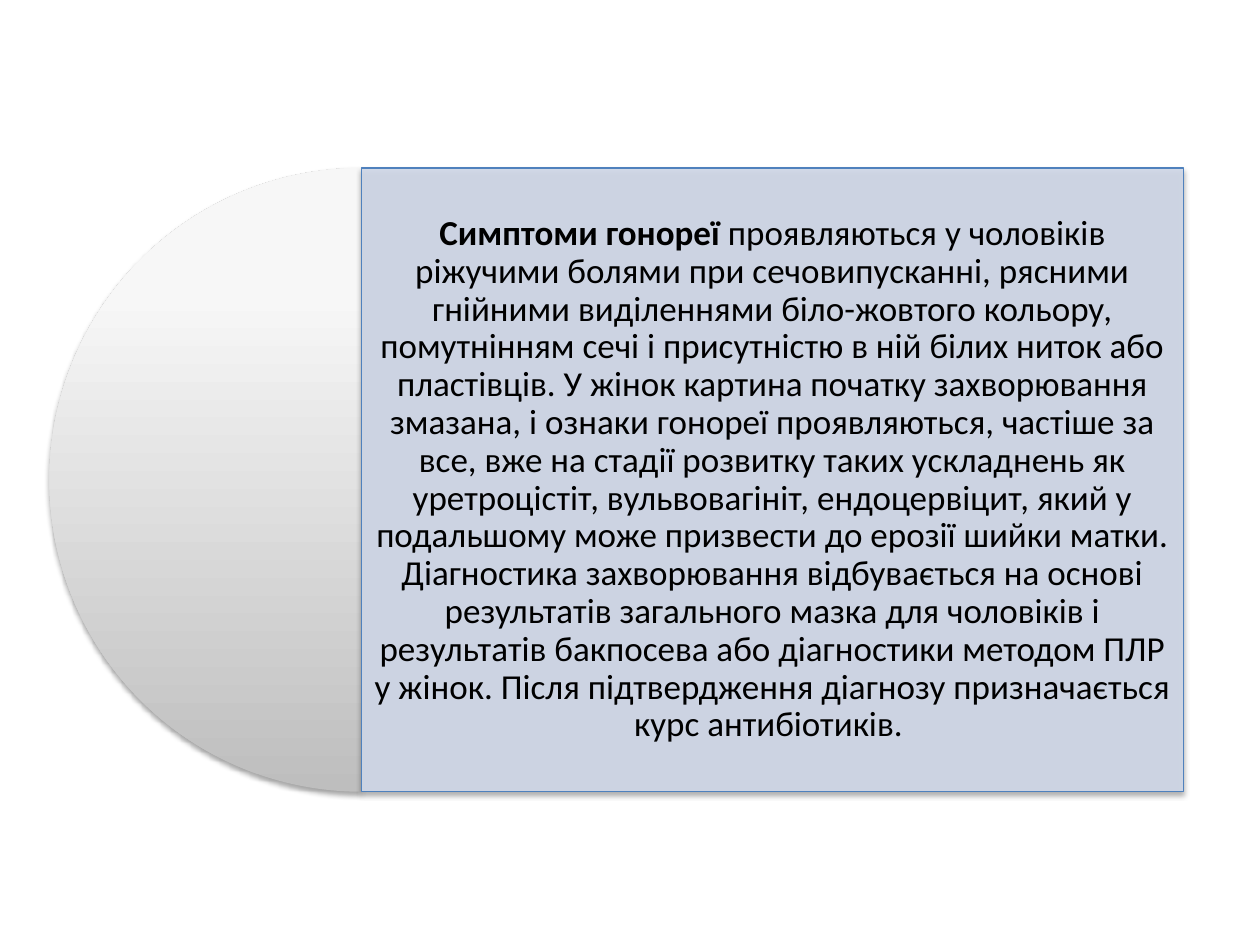
from lxml.etree import SubElement
from pptx import Presentation
from pptx.dml.color import RGBColor
from pptx.enum.shapes import MSO_SHAPE as Preset
from pptx.enum.text import MSO_ANCHOR as Anchor, PP_ALIGN as Align
from pptx.oxml.ns import qn
from pptx.util import Pt

SYMPTOMS = [
    ("Симптоми гонореї ", True),
    ("проявляються у чоловіків ріжучими болями при сечовипусканні, рясними "
     "гнійними виділеннями біло-жовтого кольору, помутнінням сечі і присутністю "
     "в ній білих ниток або пластівців. У жінок картина початку захворювання "
     "змазана, і ознаки гонореї проявляються, частіше за все, вже на стадії "
     "розвитку таких ускладнень як уретроцістіт, вульвовагініт, ендоцервіцит, "
     "який у подальшому може призвести до ерозії шийки матки. Діагностика "
     "захворювання відбувається на основі результатів загального мазка для "
     "чоловіків і результатів бакпосева або діагностики методом ПЛР у жінок. "
     "Після підтвердження діагнозу призначається курс антибіотиків. ", False),
]
GRADIENT = [(0, "BEBEBE"), (80, "F7F7F7"), (100, "F8F8F8")]
PIE_ANGLES = (90, 270)

LEFT, TOP, DIAMETER, PANEL_WIDTH = 28.2, 96, 356.4, 470
PIE_BOX = [Pt(v) for v in (LEFT, TOP, DIAMETER, DIAMETER)]
PANEL_BOX = [Pt(v) for v in (LEFT + DIAMETER / 2, TOP, PANEL_WIDTH, DIAMETER)]

FRAME_FORMAT = {"word_wrap": True, "vertical_anchor": Anchor.MIDDLE}
FRAME_FORMAT |= {f"margin_{side}": Pt(6) for side in ("left", "top", "right", "bottom")}
PARAGRAPH_FORMAT = {"alignment": Align.CENTER, "line_spacing": 0.9, "space_after": Pt(7)}
FONT_FORMAT = {"name": "Calibri", "size": Pt(20)}


def color(value):
    return RGBColor.from_string(value)


def apply(target, values):
    for name, value in values.items():
        setattr(target, name, value)


def add_color(parent, value, alpha=100):
    element = SubElement(parent, qn("a:srgbClr"), val=value)
    SubElement(element, qn("a:alpha"), val=str(alpha * 1000))


def add_shadowed(slide, preset, box):
    shape = slide.shapes.add_shape(preset, *box)
    shape.shadow.inherit = False
    effects = shape._element.spPr.find(qn("a:effectLst"))
    shadow = SubElement(effects, qn("a:outerShdw"), blurRad=str(Pt(3.1)),
                        dist=str(Pt(1.8)), dir="5400000", rotWithShape="0")
    add_color(shadow, "000000", 35)
    return shape


def add_pie(slide):
    pie = add_shadowed(slide, Preset.PIE, PIE_BOX)
    for index, angle in enumerate(PIE_ANGLES):
        pie.adjustments[index] = angle * 0.6
    pie.line.fill.background()
    pie.fill.gradient()
    pie.fill.gradient_angle = 90
    stops = pie._element.spPr.find(qn("a:gradFill")).find(qn("a:gsLst"))
    for stop in list(stops):
        stops.remove(stop)
    for position, value in GRADIENT:
        add_color(SubElement(stops, qn("a:gs"), pos=str(position * 1000)), value)


def add_panel(slide):
    panel = add_shadowed(slide, Preset.RECTANGLE, PANEL_BOX)
    panel.fill.solid()
    panel.fill.fore_color.rgb = color("D0D8E8")
    fill_color = panel._element.spPr.find(qn("a:solidFill")).find(qn("a:srgbClr"))
    SubElement(fill_color, qn("a:alpha"), val="90000")
    panel.line.color.rgb = color("4F81BD")
    panel.line.width = Pt(0.75)


def add_symptoms(slide):
    frame = slide.shapes.add_textbox(*PANEL_BOX).text_frame
    apply(frame, FRAME_FORMAT)
    paragraph = frame.paragraphs[0]
    apply(paragraph, PARAGRAPH_FORMAT)
    for text, bold in SYMPTOMS:
        run = paragraph.add_run()
        run.text = text
        apply(run.font, FONT_FORMAT | {"bold": bold})
        run.font.color.rgb = color("000000")


def main():
    presentation = Presentation()
    apply(presentation, {"slide_width": Pt(720), "slide_height": Pt(540)})
    slide = presentation.slides.add_slide(presentation.slide_layouts[6])
    add_pie(slide)
    add_panel(slide)
    add_symptoms(slide)
    presentation.save("out.pptx")


if __name__ == "__main__":
    main()
